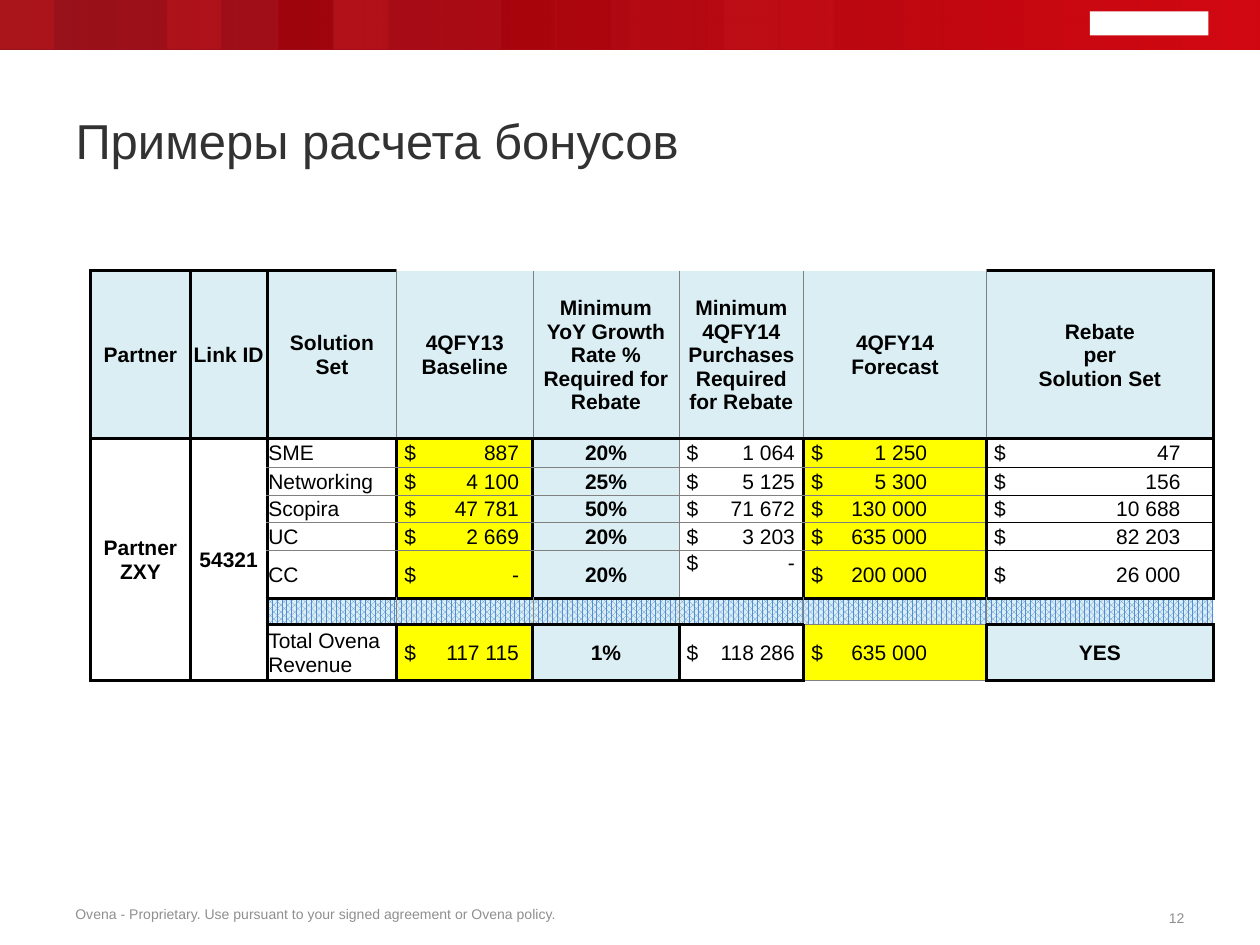
from lxml import etree
from pptx import Presentation
from pptx.dml.color import RGBColor
from pptx.enum.dml import MSO_PATTERN
from pptx.enum.shapes import MSO_SHAPE
from pptx.enum.text import MSO_ANCHOR, MSO_AUTO_SIZE, PP_ALIGN
from pptx.oxml.ns import qn
from pptx.util import Inches, Pt

LEFT, CENTER, RIGHT = PP_ALIGN.LEFT, PP_ALIGN.CENTER, PP_ALIGN.RIGHT
MIDDLE, TOP, BOTTOM = MSO_ANCHOR.MIDDLE, MSO_ANCHOR.TOP, MSO_ANCHOR.BOTTOM
RECTANGLE = MSO_SHAPE.RECTANGLE
DOTTED = MSO_PATTERN.PERCENT_75
FIXED = MSO_AUTO_SIZE.NONE

COLORS = {
    "title": "323232", "footer": "8F8F8F", "text": "000000", "white": "FFFFFF",
    "dark_red": "91050F", "red": "D10811", "light_stripe": "FF4747", "dark_stripe": "990000",
    "blue": "DAEEF3", "yellow": "FFFF00", "dots": "538DD5", "grey": "808080",
}
BORDERS = {"K": ("text", 2), "k": ("text", 0.5), "g": ("grey", 0.5)}
PLAIN_TABLE_STYLE = "{2D5ABB26-0587-4C30-8999-92F81FD0307C}"

STRIPES = {0: "light_stripe", 3: "light_stripe", 5: "dark_stripe", 6: "light_stripe",
           9: "dark_stripe", 10: "dark_stripe", 13: "light_stripe", 14: "light_stripe"}

COLUMN_WIDTHS = [0.79, 0.61, 1.03, 1.08, 1.16, 0.99, 1.45, 1.8]
ROW_HEIGHTS = [1.33, 0.23, 0.22, 0.22, 0.22, 0.38, 0.2, 0.44]
HEADINGS = ["Partner", "Link ID", "Solution\vSet", "4QFY13\vBaseline",
            "Minimum\vYoY Growth Rate %\vRequired for Rebate",
            "Minimum 4QFY14 Purchases\vRequired for Rebate",
            "4QFY14\vForecast", "Rebate\vper\vSolution Set"]
HEADING_EDGES = ["KKKK", "KKKK", "KKgK"] + ["g-gK"] * 4 + ["gKKK"]
SOLUTIONS = [
    ["SME", "887", "20%", "1 064", "1 250", "47"],
    ["Networking", "4 100", "25%", "5 125", "5 300", "156"],
    ["Scopira", "47 781", "50%", "71 672", "130 000", "10 688"],
    ["UC", "2 669", "20%", "3 203", "635 000", "82 203"],
    ["CC", "-", "20%", "-", "200 000", "26 000"],
]
TOTALS = ["Total Ovena Revenue", "117 115", "1%", "118 286", "635 000", "YES"]
TOTAL_EDGES = ["KKKK", "KKKK", "KKKK", "KK-K", "-gKg", "KKKK"]
DIVIDER_EDGES = ["KKgK", "gKgK", "gKgK", "gKgK", "gKgg", "gK-K"]
SOLUTION_SIDES = [("K", "K"), ("K", "K"), ("K", "g"), ("g", "K"), ("K", "K"), ("K", "K")]
FILLS = ["white", "yellow", "blue", "white", "yellow", "white"]
AMOUNT_TABS = {3: 0.91, 5: 0.86, 6: 0.92, 7: 1.48}


def rgb(name):
    return RGBColor.from_string(COLORS[name])


def apply(target, values):
    for name, value in values.items():
        setattr(target, name, value)


def format_text(paragraph, size, color, bold=False, align=LEFT, spacing=None):
    apply(paragraph, {"alignment": align, "line_spacing": spacing})
    for run in paragraph.runs:
        apply(run.font, {"name": "Arial", "size": Pt(size), "bold": bold})
        run.font.color.rgb = rgb(color)
    for line_break in paragraph._p.findall(qn("a:br")):
        etree.SubElement(line_break, qn("a:rPr"), sz=str(size * 100))
    if not paragraph.runs:
        etree.SubElement(paragraph._p, qn("a:endParaRPr"), sz=str(size * 100))


def add_block(slide, left, top, width, height, color=None):
    block = slide.shapes.add_shape(RECTANGLE, Inches(left), Inches(top), Inches(width), Inches(height))
    block.shadow.inherit = False
    block.line.fill.background()
    if color:
        block.fill.solid()
        block.fill.fore_color.rgb = rgb(color)
    return block


def add_gradient_band(slide):
    band = add_block(slide, 0, -0.01, 10, 0.4)
    band.fill.gradient()
    band.fill.gradient_angle = 0
    for stop, color in zip(band.fill.gradient_stops, ("dark_red", "red")):
        stop.color.rgb = rgb(color)
    start_color = band.element.find(".//" + qn("a:gs")).find(qn("a:srgbClr"))
    etree.SubElement(start_color, qn("a:alpha"), val="76000")


def add_header(slide):
    add_gradient_band(slide)
    for step, color in STRIPES.items():
        add_block(slide, 6.19 * step / 14, -0.01, 0.43, 0.4, color)
    add_gradient_band(slide)
    add_block(slide, 8.65, 0.09, 0.94, 0.19, "white")


def add_title(slide, text):
    title = slide.shapes.title
    apply(title, {"left": Inches(0.5), "top": Inches(0.48), "width": Inches(9), "height": Inches(0.92)})
    title.text_frame.text = text
    apply(title.text_frame, {"vertical_anchor": BOTTOM, "auto_size": FIXED})
    format_text(title.text_frame.paragraphs[0], 28, "title", spacing=0.9)


def add_footer_text(slide, left, top, width, text, align):
    frame = slide.shapes.add_textbox(Inches(left), Inches(top), Inches(width), Inches(0.22)).text_frame
    frame.text = text
    apply(frame, {"word_wrap": False, "vertical_anchor": MIDDLE})
    format_text(frame.paragraphs[0], 8, "footer", align=align, spacing=0.9)


def set_edges(cell, edges):
    properties = cell._tc.get_or_add_tcPr()
    sides = dict(zip("LTRB", edges))
    for side in "LRTB":
        if sides[side] in BORDERS:
            color, width = BORDERS[sides[side]]
            line = etree.SubElement(properties, qn("a:ln" + side), w=str(Pt(width)))
            fill = etree.SubElement(line, qn("a:solidFill"))
            etree.SubElement(fill, qn("a:srgbClr"), val=COLORS[color])


def fill_cell(cell, text, edges, fill, bold=False, tab=None, anchor=MIDDLE):
    cell.text = f"$\t{text}" if tab else text
    apply(cell, {"vertical_anchor": anchor, "margin_left": Inches(0.06 if tab else 0.01),
                 "margin_top": Inches(0.01), "margin_right": Inches(0.01), "margin_bottom": 0})
    set_edges(cell, edges)
    if fill == "dots":
        cell.fill.patterned()
        cell.fill.pattern = DOTTED
        cell.fill.back_color.rgb = rgb("blue")
    else:
        cell.fill.solid()
    cell.fill.fore_color.rgb = rgb(fill)
    paragraph = cell.text_frame.paragraphs[0]
    format_text(paragraph, 12, "text", bold, CENTER if bold else LEFT)
    if tab:
        tabs = etree.SubElement(paragraph._p.get_or_add_pPr(), qn("a:tabLst"))
        etree.SubElement(tabs, qn("a:tab"), pos=str(Inches(tab)), algn="r")


def fill_result_row(table, row, values, edges, fills):
    for column, (value, edge, fill) in enumerate(zip(values, edges, fills), 2):
        bold = value.endswith("%") or value == "YES"
        tab = None if bold else AMOUNT_TABS.get(column)
        anchor = TOP if value == "-" and column == 5 else MIDDLE
        fill_cell(table.cell(row, column), value, edge, fill, bold, tab, anchor)


def solution_edges(first, last):
    inner = "ggggg" + "k"
    return [left + ("K" if first else line) + right + ("K" if last else line)
            for (left, right), line in zip(SOLUTION_SIDES, inner)]


def add_bonus_table(slide):
    frame = slide.shapes.add_table(len(ROW_HEIGHTS), len(COLUMN_WIDTHS), Inches(0.72), Inches(2.15),
                                   Inches(sum(COLUMN_WIDTHS)), Inches(sum(ROW_HEIGHTS)))
    table = frame.table
    apply(table, {"first_row": False, "horz_banding": False})
    frame.element.find(".//" + qn("a:tableStyleId")).text = PLAIN_TABLE_STYLE
    for column, width in zip(table.columns, COLUMN_WIDTHS):
        column.width = Inches(width)
    for row, height in zip(table.rows, ROW_HEIGHTS):
        row.height = Inches(height)

    for column, (heading, edges) in enumerate(zip(HEADINGS, HEADING_EDGES)):
        fill_cell(table.cell(0, column), heading, edges, "blue", bold=True)
    for column, text in enumerate(["Partner ZXY", "54321"]):
        table.cell(1, column).merge(table.cell(7, column))
        fill_cell(table.cell(1, column), text, "KKKK", "white", bold=True)
    for row, values in enumerate(SOLUTIONS, 1):
        fill_result_row(table, row, values, solution_edges(row == 1, row == len(SOLUTIONS)), FILLS)
    for column, edges in enumerate(DIVIDER_EDGES, 2):
        fill_cell(table.cell(6, column), "", edges, "dots")
    fill_result_row(table, 7, TOTALS, TOTAL_EDGES, FILLS[:-1] + ["blue"])


def main():
    presentation = Presentation()
    apply(presentation, {"slide_width": Inches(10), "slide_height": Inches(7.5)})
    slide = presentation.slides.add_slide(presentation.slide_layouts[5])
    add_header(slide)
    add_footer_text(slide, 0.5, 7.15, 4.07,
                    "Ovena - Proprietary. Use pursuant to your signed agreement or Ovena policy.", LEFT)
    add_footer_text(slide, 9.16, 7.18, 0.34, "12", RIGHT)
    add_title(slide, "Примеры расчета бонусов")
    add_bonus_table(slide)
    presentation.save("out.pptx")


if __name__ == "__main__":
    main()
